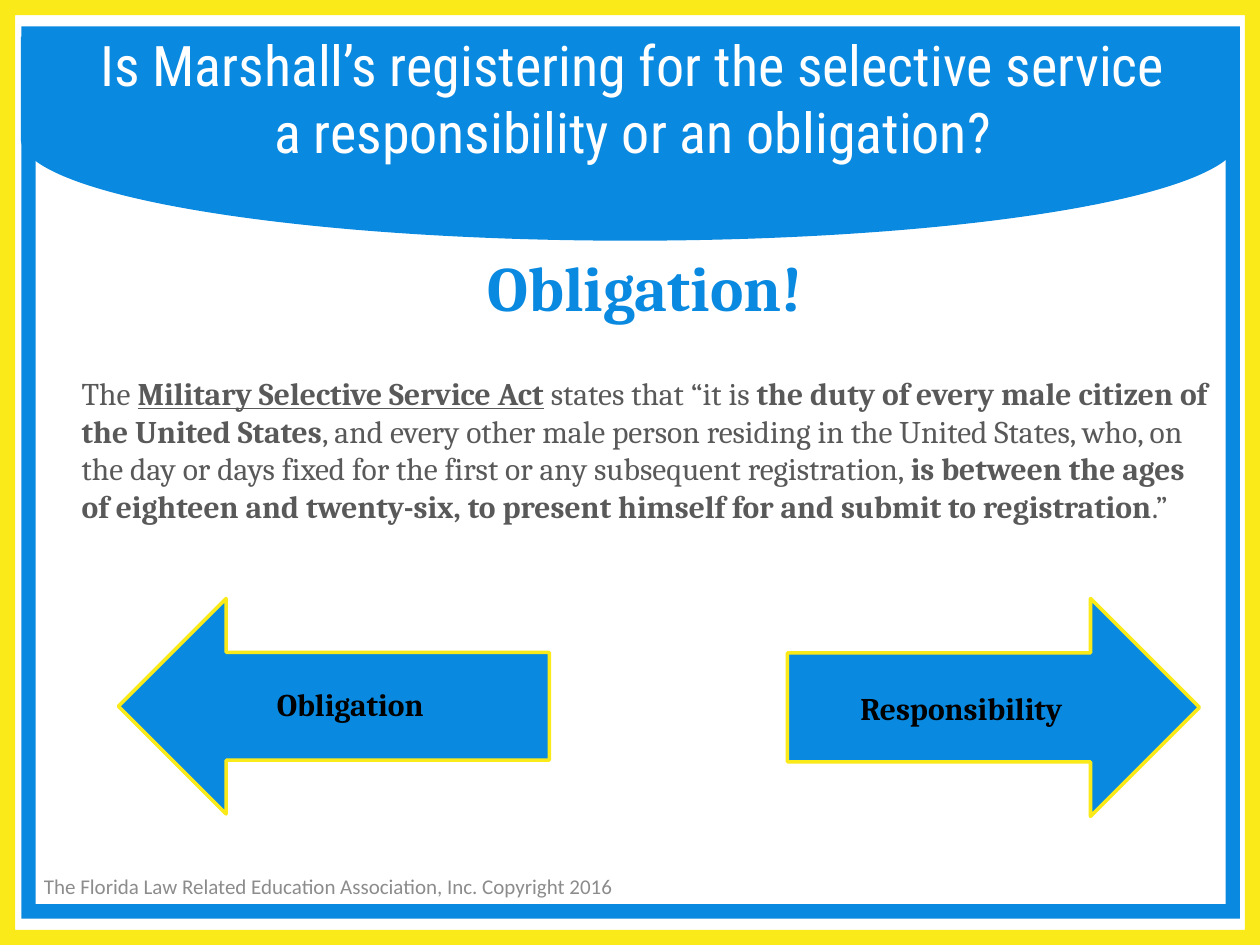
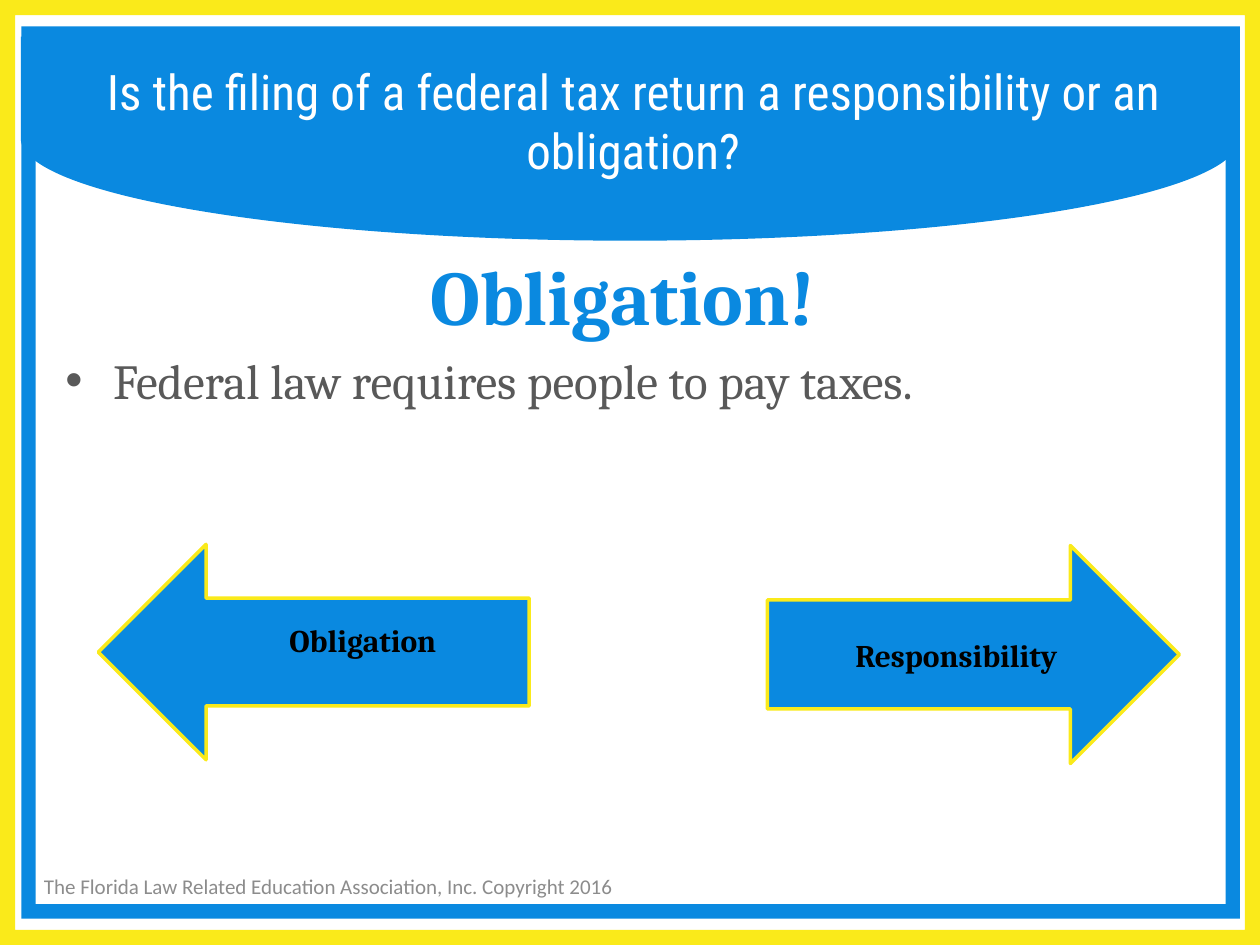
from pptx import Presentation
from pptx.dml.color import RGBColor
from pptx.enum.shapes import MSO_SHAPE as SHAPE
from pptx.enum.text import MSO_ANCHOR as ANCHOR, PP_ALIGN as ALIGN
from pptx.oxml.ns import qn
from pptx.util import Inches, Pt
from lxml.etree import SubElement

W, H = 10, 7.5
COLORS = {"blue": "0A89E0", "yellow": "FAEA1A", "white": "FFFFFF",
          "gray": "595959", "footer": "8C8C8C", "black": "000000"}
TITLE_FONT, BODY_FONT, FOOTER_FONT = "Roboto Condensed", "Cambria", "Calibri"
FOOTER = "The Florida Law Related Education Association, Inc. Copyright 2016"
INDENT = 0.05
BORDER = 0.016
ARROW_SIZES = {"Responsibility": (3.27, 1.73), "Obligation": (3.42, 1.71)}
LABEL_WIDTHS = {"Responsibility": 2.88, "Obligation": 2.54}
ROTATIONS = {"Responsibility": 0, "Obligation": 180}

# Runs are (text, style), where style holds "b" for bold and "u" for underline.
SLIDES = [
    {"title": "Is Marshall’s registering for the selective service a "
              "responsibility or an obligation?",
     "title_size": 32, "title_top": 0.15,
     "body_box": (0.5, 1.92, 9.19, 4.82),
     "answer": "Obligation!", "answer_size": 36,
     "reason": [
         ("The ", ""),
         ("Military Selective Service Act", "bu"),
         (" states that “it is ", ""),
         ("the duty of every male citizen of the United States", "b"),
         (", and every other male person residing in the United States, who, "
          "on the day or days fixed for the first or any subsequent "
          "registration, ", ""),
         ("is between the ages of eighteen and twenty-six, to present himself "
          "for and submit to registration", "b"),
         (".”", "")],
     "reason_size": 18, "reason_gap": 28.6, "bullet": False,
     "arrows": {"Responsibility": (6.25, 4.75), "Obligation": (0.94, 4.75)},
     "labels": {"Responsibility": (6.19, 5.42), "Obligation": (1.51, 5.39)}},
    {"title": "Is the filing of a federal tax return a responsibility or an "
              "obligation?",
     "title_size": 28, "title_top": 0.33,
     "body_box": (0.42, 1.92, 9, 2),
     "answer": "Obligation!", "answer_size": 44,
     "reason": [("Federal law requires people to pay taxes.", "")],
     "reason_size": 28, "reason_gap": 5.6, "bullet": True,
     "arrows": {"Responsibility": (6.09, 4.33), "Obligation": (0.78, 4.32)},
     "labels": {"Responsibility": (6.15, 5), "Obligation": (1.61, 4.88)}},
]


def rgb(name):
    return RGBColor.from_string(COLORS[name])


def add_shape(slide, kind, box, fill, line=None, rotation=0):
    s = slide.shapes.add_shape(kind, *map(Inches, box))
    s.shadow.inherit = False
    s.rotation = rotation
    s.fill.solid()
    s.fill.fore_color.rgb = rgb(fill)
    if line:
        s.line.color.rgb = rgb(line)
        s.line.width = Pt(2)
    else:
        s.line.fill.background()
    return s


def add_box(slide, box, anchor=ANCHOR.TOP):
    tf = slide.shapes.add_textbox(*map(Inches, box)).text_frame
    tf.word_wrap = True
    tf.vertical_anchor = anchor
    return tf


def add_run(p, text, font, size, color, style=""):
    r = p.add_run()
    r.text = text
    f = r.font
    f.name, f.size, f.color.rgb = font, Pt(size), rgb(color)
    f.bold, f.underline = "b" in style, "u" in style


def indent(p, left, first=0, bullet=None):
    pPr = p._p.get_or_add_pPr()
    pPr.set("marL", str(Inches(left)))
    pPr.set("indent", str(Inches(first)))
    if bullet:
        SubElement(pPr, qn("a:buFont")).set("typeface", "Arial")
        SubElement(pPr, qn("a:buChar")).set("char", bullet)


def add_frame(slide, box, color):
    add_shape(slide, SHAPE.FRAME, box, color).adjustments[0] = BORDER


def add_background(slide):
    """Draw the curved title band and the two borders."""
    band_w, band_h, middle = 9.67, 1.62, 1.1
    # The band is turned upright, so its width and height are swapped.
    add_shape(slide, SHAPE.FLOWCHART_DELAY,
              ((W - band_h) / 2, middle - band_w / 2, band_h, band_w),
              "blue", rotation=90)
    add_frame(slide, (0, 0, W, H), "yellow")
    add_frame(slide, (0.17, 0.21, band_w, 7.08), "blue")


def add_title(slide, text, size, top):
    p = add_box(slide, (0.5, top, 9, 1.25), ANCHOR.MIDDLE).paragraphs[0]
    p.alignment = ALIGN.CENTER
    indent(p, INDENT)
    add_run(p, text, TITLE_FONT, size, "white")


def add_body(slide, data):
    tf = add_box(slide, data["body_box"])
    p = tf.paragraphs[0]
    p.alignment = ALIGN.CENTER
    indent(p, INDENT)
    add_run(p, data["answer"], BODY_FONT, data["answer_size"], "blue", "b")

    p = tf.add_paragraph()
    p.space_before = Pt(data["reason_gap"])
    if data["bullet"]:
        indent(p, 0.38, -0.38, "•")
    else:
        indent(p, INDENT)
    for text, style in data["reason"]:
        add_run(p, text, BODY_FONT, data["reason_size"], "gray", style)


def add_choices(slide, arrows, labels):
    for name, corner in arrows.items():
        add_shape(slide, SHAPE.RIGHT_ARROW, corner + ARROW_SIZES[name],
                  "blue", "yellow", ROTATIONS[name])
    for name, corner in labels.items():
        p = add_box(slide, corner + (LABEL_WIDTHS[name], 0.4)).paragraphs[0]
        p.alignment = ALIGN.CENTER
        add_run(p, name, BODY_FONT, 18, "black", "b")


def add_footer(slide):
    p = add_box(slide, (0.25, 6.83, 5.25, 0.4), ANCHOR.MIDDLE).paragraphs[0]
    add_run(p, FOOTER, FOOTER_FONT, 12, "footer")


def main():
    prs = Presentation()
    prs.slide_width, prs.slide_height = Inches(W), Inches(H)
    for data in SLIDES:
        slide = prs.slides.add_slide(prs.slide_layouts[6])
        add_background(slide)
        add_body(slide, data)
        add_title(slide, data["title"], data["title_size"], data["title_top"])
        add_choices(slide, data["arrows"], data["labels"])
        add_footer(slide)
    prs.save("out.pptx")


if __name__ == "__main__":
    main()
